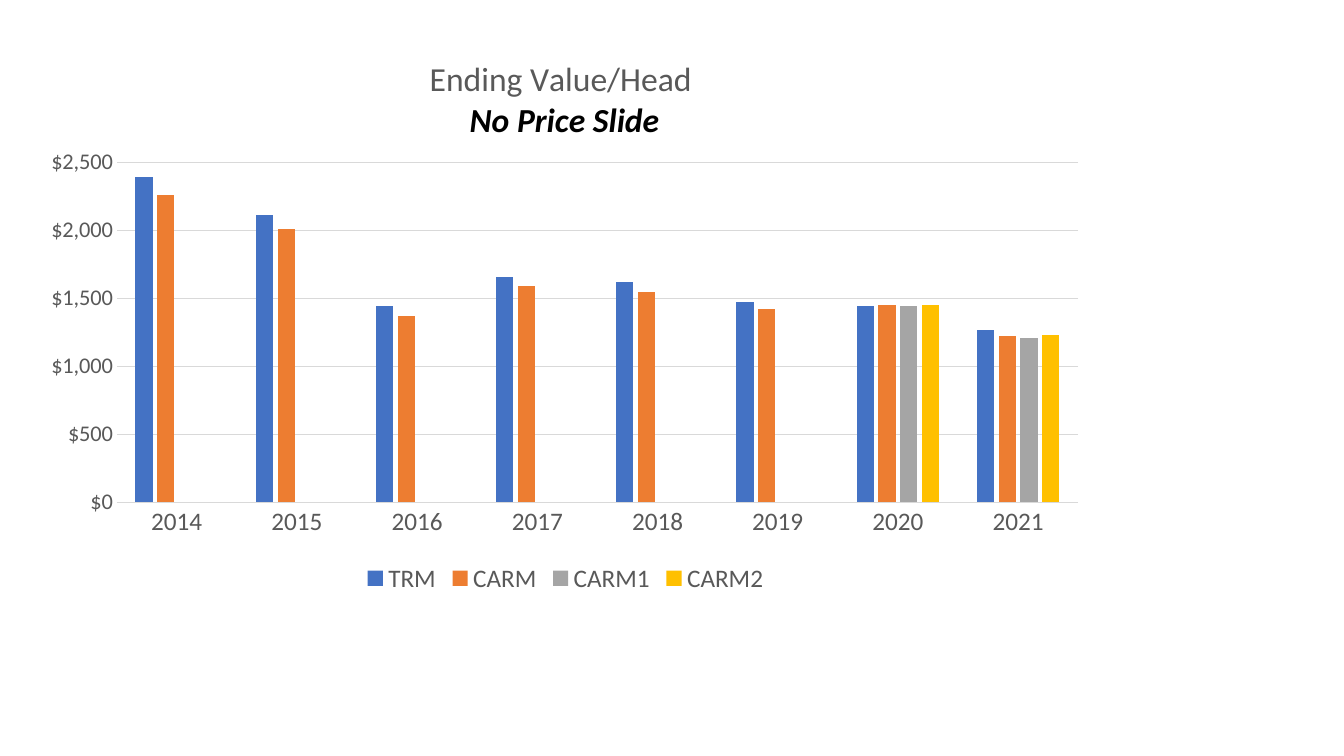
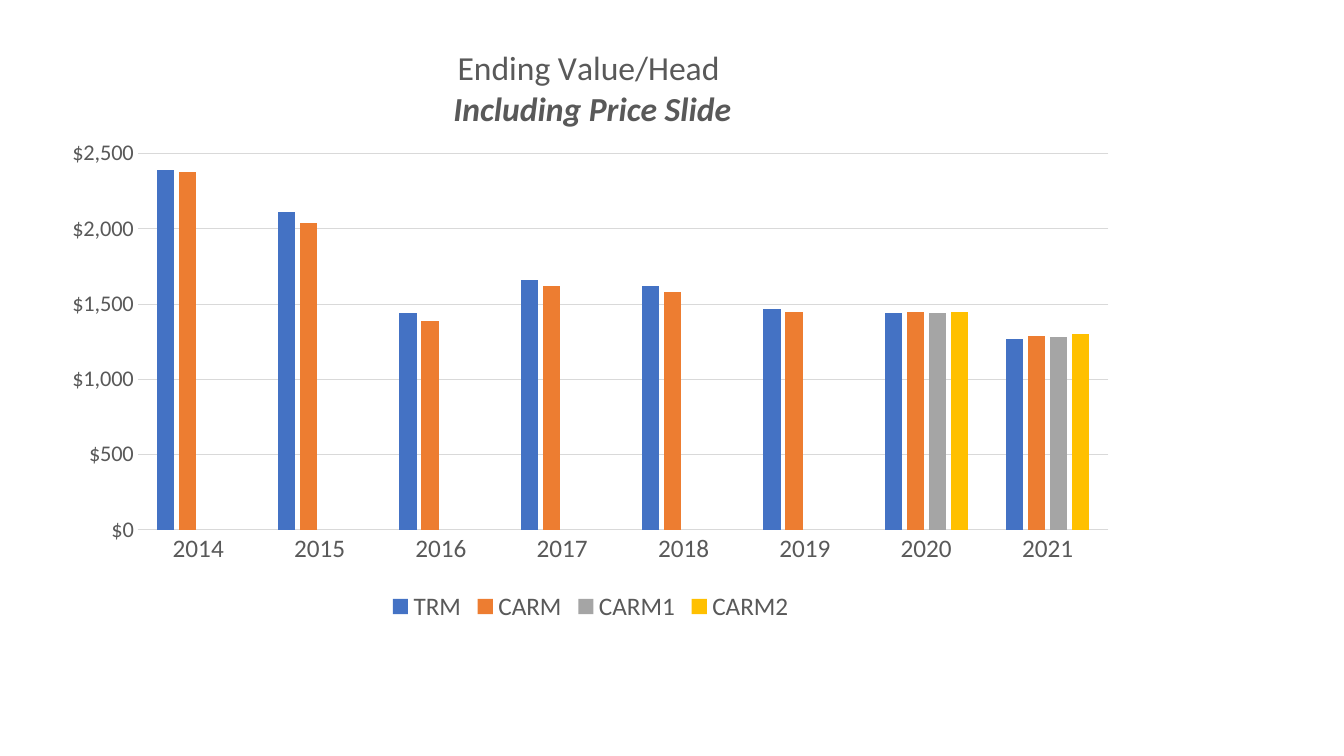
from lxml import etree
from pptx import Presentation
from pptx.chart.data import CategoryChartData
from pptx.dml.color import RGBColor
from pptx.enum.chart import XL_CHART_TYPE, XL_LEGEND_POSITION, XL_TICK_MARK
from pptx.oxml import parse_xml
from pptx.oxml.ns import nsdecls, qn
from pptx.util import Pt

COLORS = {
    "text": "595959", "black": "000000", "grid": "D9D9D9",
    "TRM": "4472C4", "CARM": "ED7D31", "CARM1": "A5A5A5", "CARM2": "FFC000",
}
FONT = "Calibri"
YEARS = [str(year) for year in range(2014, 2022)]
TRM = [2390, 2110, 1440, 1660, 1620, 1470, 1440, 1270]
NO_DATA = [None] * 6

# Boxes are left, top, width, height in points; layouts are fractions of the box
SLIDES = [
    {
        "box": (22.3, 23, 763.2, 404.6),
        "subtitle": "No Price Slide", "subtitle_color": "black",
        "title_at": {"x": 0.37, "y": 0.04},
        "plot_at": {"x": 0.08, "y": 0.23, "w": 0.9, "h": 0.6},
        "series": {
            "TRM": TRM,
            "CARM": [2260, 2010, 1370, 1590, 1550, 1420, 1450, 1220],
            "CARM1": NO_DATA + [1440, 1210],
            "CARM2": NO_DATA + [1450, 1230],
        },
    },
    {
        "box": (36.7, 14.4, 770.4, 433.4),
        "subtitle": "Including Price Slide", "subtitle_color": "text",
        "title_at": {"x": 0.37, "y": 0.04},
        "plot_at": {"x": 0.08, "y": 0.22, "w": 0.9, "h": 0.62},
        "series": {
            "TRM": TRM,
            "CARM": [2380, 2040, 1390, 1620, 1580, 1450, 1450, 1290],
            "CARM1": NO_DATA + [1440, 1280],
            "CARM2": NO_DATA + [1450, 1300],
        },
    },
]


def rgb(name):
    return RGBColor.from_string(COLORS[name])


def set_font(font, size, color="text", **extra):
    font.color.rgb = rgb(color)
    for key, value in {"name": FONT, "size": Pt(size), **extra}.items():
        setattr(font, key, value)


def set_line(line, color):
    line.color.rgb = rgb(color)
    line.width = Pt(0.75)


def set_layout(parent, position, index, inner=False):
    """Give a chart part a fixed position."""
    old = parent.find(qn("c:layout"))
    if old is not None:
        parent.remove(old)
    layout = parse_xml(f"<c:layout {nsdecls('c')}><c:manualLayout/></c:layout>")
    values = {"layoutTarget": "inner"} if inner else {}
    values.update({"xMode": "edge", "yMode": "edge"}, **position)
    for tag, value in values.items():
        etree.SubElement(layout[0], qn(f"c:{tag}")).set("val", str(value))
    parent.insert(index, layout)


def add_title(chart, subtitle, color, position):
    title = chart.chart_title
    title.include_in_layout = False
    tf = title.text_frame
    lines = [
        ("Ending Value/Head ", "text", {"bold": False}),
        (subtitle, color, {"bold": True, "italic": True}),
    ]
    for i, (text, line_color, style) in enumerate(lines):
        p = tf.add_paragraph() if i else tf.paragraphs[0]
        r = p.add_run()
        r.text = text
        set_font(r.font, 24, line_color, **style)
    set_layout(title._element, position, 1)


def style_axes(chart):
    for axis, size in ((chart.category_axis, 18), (chart.value_axis, 16)):
        axis.major_tick_mark = axis.minor_tick_mark = XL_TICK_MARK.NONE
        set_font(axis.tick_labels.font, size)
    set_line(chart.category_axis.format.line, "grid")

    values = chart.value_axis
    scale = {"minimum_scale": 0, "maximum_scale": 2500, "major_unit": 500}
    for key, value in scale.items():
        setattr(values, key, value)
    values.format.line.fill.background()
    set_line(values.major_gridlines.format.line, "grid")
    values.tick_labels.number_format = '"$"#,##0'
    values.tick_labels.number_format_is_linked = False


def add_value_chart(slide, spec_box, series, subtitle, subtitle_color, title_at, plot_at):
    data = CategoryChartData()
    data.categories = YEARS
    for name, values in series.items():
        data.add_series(name, values)
    chart = slide.shapes.add_chart(
        XL_CHART_TYPE.COLUMN_CLUSTERED, *map(Pt, spec_box), data).chart
    set_font(chart.font, 10, "black")

    # Title and axes
    add_title(chart, subtitle, subtitle_color, title_at)
    style_axes(chart)

    # Columns
    plot = chart.plots[0]
    for key, value in {"gap_width": 219, "overlap": -27, "vary_by_categories": False}.items():
        setattr(plot, key, value)
    for s in plot.series:
        s.format.fill.solid()
        s.format.fill.fore_color.rgb = rgb(s.name)
        s.invert_if_negative = False
    set_layout(chart._chartSpace.chart.plotArea, plot_at, 0, inner=True)

    # Legend
    chart.has_legend = True
    chart.legend.position = XL_LEGEND_POSITION.BOTTOM
    chart.legend.include_in_layout = False
    set_font(chart.legend.font, 18)


def main():
    prs = Presentation()
    prs.slide_width, prs.slide_height = Pt(960), Pt(540)
    for content in SLIDES:
        s = prs.slides.add_slide(prs.slide_layouts[6])
        options = dict(content)
        add_value_chart(s, options.pop("box"), **options)
    prs.save("out.pptx")


if __name__ == "__main__":
    main()
